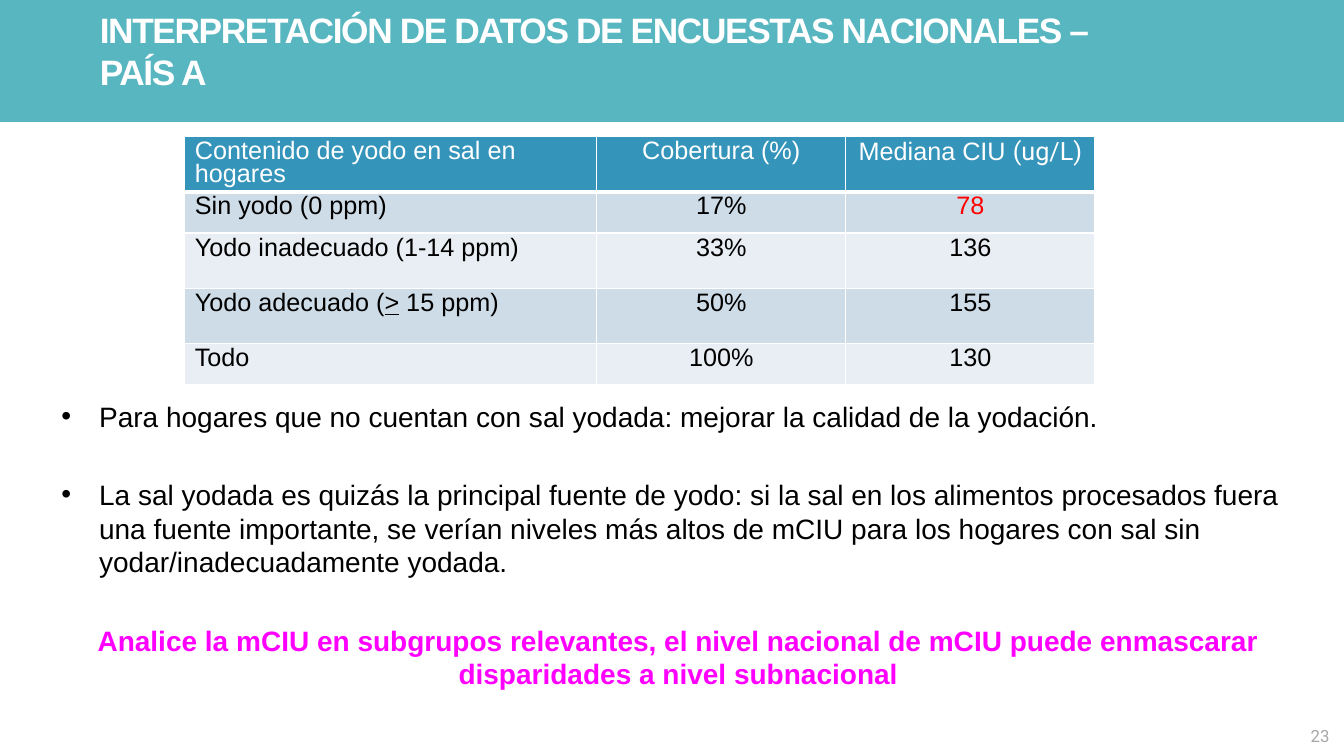
from dataclasses import dataclass

from lxml.etree import SubElement
from pptx import Presentation
from pptx.dml.color import RGBColor as Rgb
from pptx.enum.shapes import MSO_SHAPE as Shape
from pptx.enum.text import MSO_ANCHOR as Anchor, PP_ALIGN as Align
from pptx.oxml.ns import qn
from pptx.util import Pt

COLORS = {
    "banner": "58B6C0",
    "header": "3494BA",
    "odd_row": "CEDCE7",
    "even_row": "E8EEF3",
    "white": "FFFFFF",
    "black": "000000",
    "alert": "FF0000",
    "message": "FF00FF",
    "number": "A7A7A7",
}


@dataclass(frozen=True)
class Piece:
    text: str
    color: str = "black"
    size: float = 18
    font: str = "Arial"
    bold: bool = False
    underline: bool = False
    spacing: float = 0


@dataclass(frozen=True)
class Line:
    pieces: tuple[Piece, ...]
    align: Align = Align.LEFT
    bullet: bool = False
    before: float = 0
    line_spacing: float = 1.0


@dataclass(frozen=True)
class TextArea:
    left: float
    top: float
    width: float
    height: float
    lines: tuple[Line, ...]
    inset: tuple[float, float] = (7.2, 3.6)
    anchor: Anchor = Anchor.TOP
    wrap: bool = True


@dataclass(frozen=True)
class TableRow:
    height: float
    fill: str
    cells: tuple[tuple[Piece, ...], ...]


def write_line(para, line: Line) -> None:
    if line.bullet:
        props = para._p.get_or_add_pPr()
        props.set("marL", str(Pt(27)))
        props.set("indent", str(Pt(-27)))
        SubElement(props, qn("a:buFont")).set("typeface", "Arial")
        SubElement(props, qn("a:buChar")).set("char", "•")
    para.alignment = line.align
    para.space_before = Pt(line.before)
    para.line_spacing = line.line_spacing
    for piece in line.pieces:
        span = para.add_run()
        span.text = piece.text
        font = span.font
        font.name = piece.font
        font.size = Pt(piece.size)
        font.bold = piece.bold
        font.underline = piece.underline
        font.color.rgb = Rgb.from_string(COLORS[piece.color])
        if piece.spacing:
            font._element.set("spc", str(round(piece.spacing * 100)))


def draw_text(page, area: TextArea) -> None:
    box = page.shapes.add_textbox(
        Pt(area.left), Pt(area.top), Pt(area.width), Pt(area.height)
    )
    frame = box.text_frame
    frame.word_wrap = area.wrap
    frame.vertical_anchor = area.anchor
    frame.margin_left = frame.margin_right = Pt(area.inset[0])
    frame.margin_top = frame.margin_bottom = Pt(area.inset[1])
    for index, line in enumerate(area.lines):
        para = frame.add_paragraph() if index else frame.paragraphs[0]
        write_line(para, line)


def draw_borders(cell, top: float, bottom: float) -> None:
    props = cell._tc.get_or_add_tcPr()
    for side, width in (("L", 1), ("R", 1), ("T", top), ("B", bottom)):
        border = SubElement(props, qn(f"a:ln{side}"), w=str(Pt(width)))
        fill = SubElement(border, qn("a:solidFill"))
        SubElement(fill, qn("a:srgbClr")).set("val", COLORS["white"])


def draw_table(page, left: float, top: float, widths: tuple[float, ...],
               rows: tuple[TableRow, ...]) -> None:
    table = page.shapes.add_table(
        len(rows), len(widths), Pt(left), Pt(top),
        Pt(sum(widths)), Pt(sum(row.height for row in rows)),
    ).table
    table.first_row = table.horz_banding = False
    for column, width in zip(table.columns, widths):
        column.width = Pt(width)
    for row_index, row in enumerate(rows):
        table.rows[row_index].height = Pt(row.height)
        for column_index, pieces in enumerate(row.cells):
            cell = table.cell(row_index, column_index)
            draw_borders(cell, 3 if row_index == 1 else 1, 3 if row_index == 0 else 1)
            cell.fill.solid()
            cell.fill.fore_color.rgb = Rgb.from_string(COLORS[row.fill])
            align = Align.CENTER if column_index else Align.LEFT
            write_line(cell.text_frame.paragraphs[0],
                       Line(pieces, align, line_spacing=0.8))


def draw_banner(page, width: float, height: float) -> None:
    banner = page.shapes.add_shape(Shape.RECTANGLE, 0, 0, Pt(width), Pt(height))
    banner.shadow.inherit = False
    banner.fill.solid()
    banner.fill.fore_color.rgb = Rgb.from_string(COLORS["banner"])
    banner.line.fill.background()


IODINE_ROWS = (
    TableRow(38.5, "header", (
        (Piece("Contenido de yodo en sal en hogares", "white"),),
        (Piece("Cobertura (%)", "white"),),
        (Piece("Mediana CIU ", "white"), Piece("(ug/L)", "white", font="Roboto")),
    )),
    TableRow(29.5, "odd_row", (
        (Piece("Sin yodo (0 ppm)"),), (Piece("17%"),), (Piece("78", "alert"),),
    )),
    TableRow(39.5, "even_row", (
        (Piece("Yodo inadecuado (1-14 ppm)"),), (Piece("33%"),), (Piece("136"),),
    )),
    TableRow(39.5, "odd_row", (
        (Piece("Yodo adecuado ("), Piece(">", underline=True), Piece(" 15 ppm)")),
        (Piece("50%"),), (Piece("155"),),
    )),
    TableRow(29, "even_row", (
        (Piece("Todo"),), (Piece("100%"),), (Piece("130"),),
    )),
)

TITLE = TextArea(71.3, 15.8, 749.5, 50.4, (
    Line((Piece("INTERPRETACIÓN DE DATOS DE ENCUESTAS NACIONALES – PAÍS A",
                "white", 25.2, bold=True, spacing=-1),)),
), inset=(0, 0), anchor=Anchor.BOTTOM)

FINDINGS = TextArea(36.7, 281.5, 895.7, 242, (
    Line((Piece("Para hogares que no cuentan con sal yodada: mejorar la calidad "
                "de la yodación.", size=20),), bullet=True),
    Line((Piece("La sal yodada es quizás la principal fuente de yodo: si la sal en "
                "los alimentos procesados fuera una fuente importante, se verían "
                "niveles más altos de mCIU para los hogares con sal sin "
                "yodar/inadecuadamente yodada.", size=20),),
         bullet=True, before=32),
    Line((Piece("Analice la mCIU en subgrupos relevantes, el nivel nacional de mCIU "
                "puede enmascarar disparidades a nivel subnacional",
                "message", 20, bold=True),), Align.CENTER, before=32),
))

PAGE_NUMBER = TextArea(932.4, 514.8, 20.9, 21.6, (
    Line((Piece("23", "number", 12, "Roboto"),), Align.RIGHT),
), inset=(3.6, 3.6), anchor=Anchor.MIDDLE, wrap=False)


def main() -> None:
    deck = Presentation()
    deck.slide_width, deck.slide_height = Pt(960), Pt(540)
    page = deck.slides.add_slide(deck.slide_layouts[6])
    draw_banner(page, 960, 87.1)
    draw_table(page, 132, 97.5, (294.2, 178, 178), IODINE_ROWS)
    for area in (FINDINGS, TITLE, PAGE_NUMBER):
        draw_text(page, area)
    deck.save("out.pptx")


if __name__ == "__main__":
    main()
